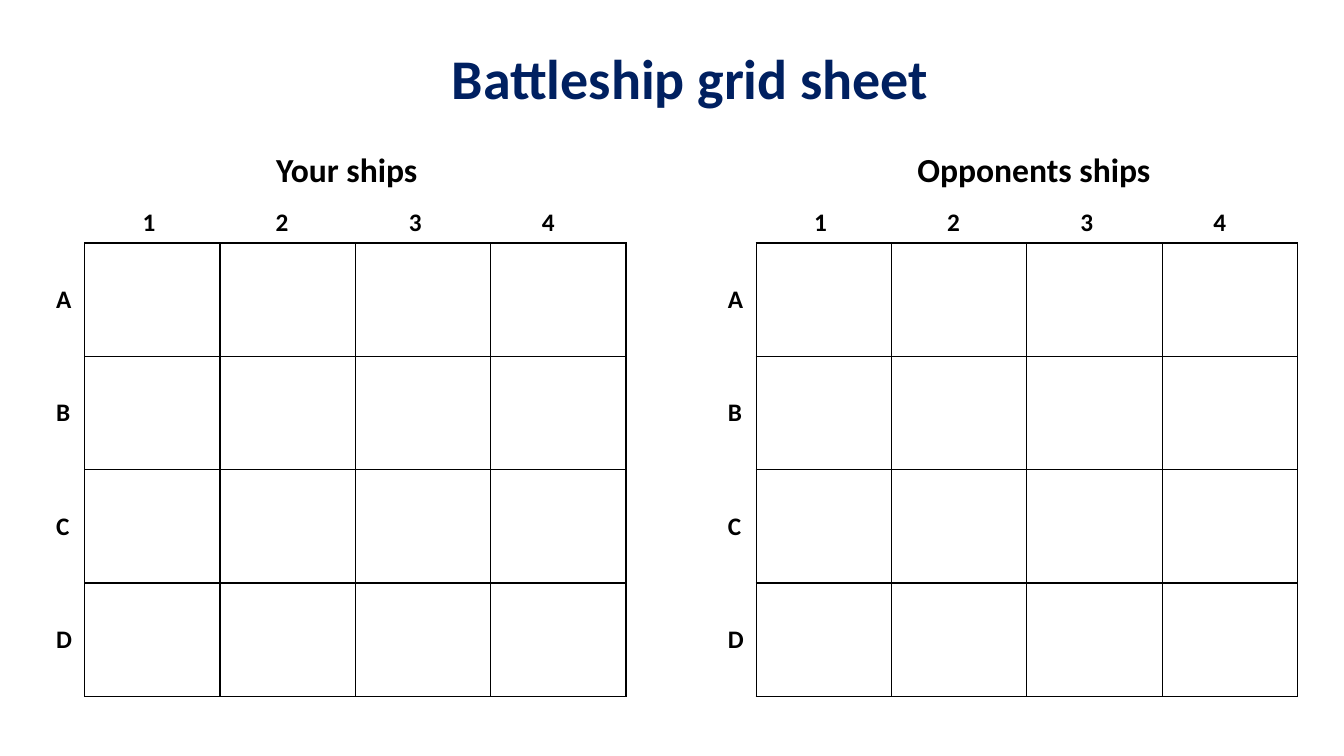
from lxml.etree import SubElement
from pptx import Presentation
from pptx.dml.color import RGBColor
from pptx.enum.text import MSO_ANCHOR, MSO_AUTO_SIZE, PP_ALIGN
from pptx.oxml.ns import qn
from pptx.util import Inches, Pt

TITLE = "Battleship grid sheet"
# heading, left edge of the grid, left edge and width of the heading
BOARDS = [
    ("Your ships", 0.84, 2.64, 1.76),
    ("Opponents ships", 7.5, 9, 2.62),
]
COLUMNS = ["1", "2", "3", "4"]
ROWS = ["A", "B", "C", "D"]

NAVY, BLACK = "002060", "000000"
GRID_TOP, GRID_WIDTH, GRID_HEIGHT = 2.41, 5.37, 4.5
ROW_STEP = GRID_HEIGHT / len(ROWS)
FIRST_TAB, TAB_STEP = 0.54, 1.32


def rgb(value):
    return RGBColor.from_string(value)


def inches(*values):
    return [Inches(value) for value in values]


def write(box, text, size, color=BLACK):
    """Put one bold, left-aligned line into a text shape."""
    frame = box.text_frame
    frame.word_wrap = True
    frame.auto_size = MSO_AUTO_SIZE.NONE
    frame.vertical_anchor = MSO_ANCHOR.TOP
    para = frame.paragraphs[0]
    para.alignment = PP_ALIGN.LEFT
    span = para.add_run()
    span.text = text
    for name, value in {"name": "Calibri", "size": Pt(size), "bold": True}.items():
        setattr(span.font, name, value)
    span.font.color.rgb = rgb(color)
    return para


def add_label(page, place, text, size):
    return write(page.shapes.add_textbox(*inches(*place)), text, size)


def add_center_tabs(para):
    tabs = SubElement(para._p.get_or_add_pPr(), qn("a:tabLst"))
    for index in range(len(COLUMNS)):
        position = Inches(FIRST_TAB + index * TAB_STEP)
        SubElement(tabs, qn("a:tab"), pos=str(position), algn="ctr")


def outline(cell):
    properties = cell._tc.get_or_add_tcPr()
    for side in ("lnL", "lnR", "lnT", "lnB"):
        line = SubElement(properties, qn(f"a:{side}"), w=str(Pt(1)))
        fill = SubElement(line, qn("a:solidFill"))
        SubElement(fill, qn("a:srgbClr"), val=BLACK)
    cell.fill.background()


def add_grid(page, left):
    place = inches(left, GRID_TOP, GRID_WIDTH, GRID_HEIGHT)
    grid = page.shapes.add_table(len(ROWS), len(COLUMNS), *place).table
    grid.first_row = grid.horz_banding = False
    for cell in grid.iter_cells():
        outline(cell)


def add_board(page, heading, left, heading_left, heading_width):
    add_grid(page, left)
    numbers = "".join("\t" + number for number in COLUMNS)
    add_center_tabs(add_label(page, (left, 2, GRID_WIDTH, 0.4), numbers, 18))
    for index, letter in enumerate(ROWS):
        top = 2.76 + index * ROW_STEP
        add_label(page, (left - 0.38, top, 0.34, 0.4), letter, 18)
    add_label(page, (heading_left, 1.43, heading_width, 0.5), heading, 24)


def main():
    deck = Presentation()
    deck.slide_width, deck.slide_height = inches(13.33, 7.5)
    page = deck.slides.add_slide(deck.slide_layouts[5])
    title = page.shapes.title
    title.left, title.top, title.width, title.height = inches(4.38, 0.38, 5.01, 0.77)
    write(title, TITLE, 40, NAVY)
    for board in BOARDS:
        add_board(page, *board)
    deck.save("out.pptx")


if __name__ == "__main__":
    main()
